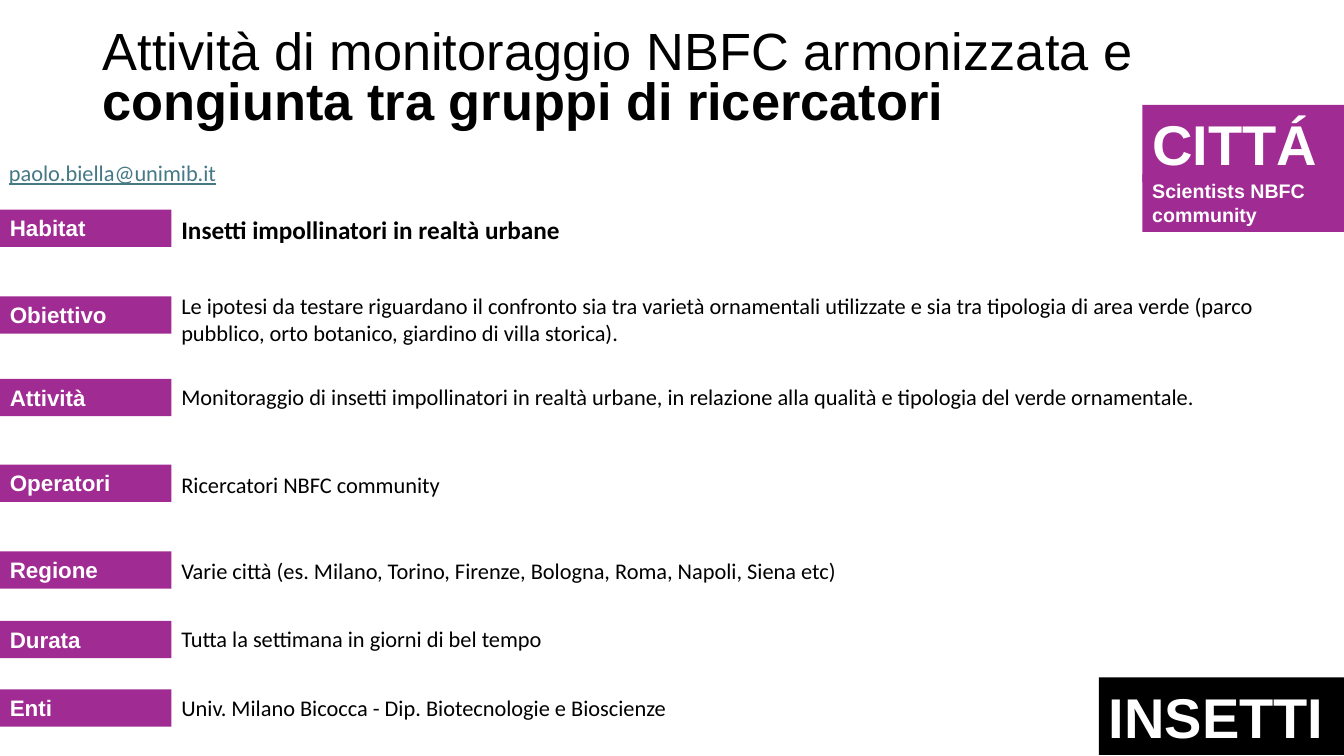
from pptx import Presentation
from pptx.dml.color import RGBColor
from pptx.enum.shapes import MSO_SHAPE as Shape
from pptx.enum.text import MSO_ANCHOR as Anchor, MSO_AUTO_SIZE as AutoSize, PP_ALIGN as Align
from pptx.util import Inches, Pt

PURPLE, BLACK, WHITE, LINK = "A02B93", "000000", "FFFFFF", "467886"
LABEL_WIDTH, LABEL_HEIGHT = 1.7, 0.37

# label, label top, text, text top, text width, text height, style
ROWS = [
    ("Habitat", 2.08, "Insetti impollinatori in realtà urbane",
     2.08, 11.13, 0.4, {"size": 18, "bold": True}),
    ("Obiettivo", 2.94, "Le ipotesi da testare riguardano il confronto sia tra varietà "
     "ornamentali utilizzate e sia tra tipologia di area verde (parco pubblico, "
     "orto botanico, giardino di villa storica).", 2.85, 11.13, 0.64, {}),
    ("Attività", 3.76, "Monitoraggio di insetti impollinatori in realtà urbane, in relazione "
     "alla qualità e tipologia del verde ornamentale.",
     3.73, 11.41, 0.7, {"align": Align.JUSTIFY, "spacing": 1.07}),
    ("Operatori", 4.61, "Ricercatori NBFC community",
     4.61, 10.62, 0.66, {"align": Align.JUSTIFY, "spacing": 1.07}),
    ("Regione", 5.47, "Varie città (es. Milano, Torino, Firenze, Bologna, Roma, Napoli, Siena etc)",
     5.48, 11.32, 0.37, {}),
    ("Durata", 6.16, "Tutta la settimana in giorni di bel tempo", 6.15, 11.41, 0.37, {}),
    ("Enti", 6.84, "Univ. Milano Bicocca - Dip. Biotecnologie e Bioscienze",
     6.84, 6.78, 0.37, {}),
]


def color(hex_text):
    return RGBColor.from_string(hex_text)


class ProjectSheet:
    heading_font = "Arial"
    body_font = "Calibri"

    def __init__(self, page):
        self.page = page

    def style_span(self, span, font, size, ink, bold=False, underline=False):
        span.font.name = font
        span.font.size = Pt(size)
        span.font.color.rgb = color(ink)
        span.font.bold = bold
        span.font.underline = underline

    def frame(self, shape, anchor=Anchor.TOP):
        """Apply the common wrapping, anchor and margins to a shape's text."""
        frame = shape.text_frame
        frame.auto_size = AutoSize.NONE
        frame.word_wrap = True
        frame.vertical_anchor = anchor
        frame.margin_left = frame.margin_right = Inches(0.1)
        frame.margin_top = frame.margin_bottom = Inches(0.05)
        return frame

    def title(self, left, top, width, height, parts):
        """Fill the title placeholder from (text, bold) parts."""
        title = self.page.shapes.title
        title.left, title.top = Inches(left), Inches(top)
        title.width, title.height = Inches(width), Inches(height)
        para = self.frame(title, Anchor.MIDDLE).paragraphs[0]
        para.alignment = Align.LEFT
        para.line_spacing = 0.8
        for text, bold in parts:
            span = para.add_run()
            span.text = text
            self.style_span(span, self.heading_font, 37.4, BLACK, bold)

    def text(self, left, top, width, height, text, size=16, ink=BLACK, bold=False,
             underline=False, align=Align.LEFT, spacing=1.0):
        box = self.page.shapes.add_textbox(
            Inches(left), Inches(top), Inches(width), Inches(height))
        para = self.frame(box).paragraphs[0]
        para.text = text
        para.alignment = align
        para.line_spacing = spacing
        self.style_span(para.runs[0], self.body_font, size, ink, bold, underline)

    def tag(self, left, top, width, height, text, size=16, fill=PURPLE):
        """Add a filled rectangle with bold white text."""
        tag = self.page.shapes.add_shape(
            Shape.RECTANGLE, Inches(left), Inches(top), Inches(width), Inches(height))
        tag.shadow.inherit = False
        tag.fill.solid()
        tag.fill.fore_color.rgb = color(fill)
        tag.line.fill.background()
        para = self.frame(tag).paragraphs[0]
        para.text = text
        para.alignment = Align.LEFT
        self.style_span(para.runs[0], self.heading_font, size, WHITE, bold=True)


def main():
    deck = Presentation()
    deck.slide_width, deck.slide_height = Inches(13.33), Inches(7.5)
    sheet = ProjectSheet(deck.slides.add_slide(deck.slide_layouts[5]))

    sheet.title(0.92, 0.07, 10.7, 1.45, [
        ("Attività di monitoraggio NBFC armonizzata e ", False),
        ("congiunta tra gruppi di ricercatori", True),
    ])
    sheet.text(-0.01, 1.51, 9.43, 0.39, "paolo.biella@unimib.it",
               ink=LINK, underline=True, spacing=1.07)

    for label, label_top, text, top, width, height, style in ROWS:
        sheet.tag(0, label_top, LABEL_WIDTH, LABEL_HEIGHT, label)
        sheet.text(LABEL_WIDTH, top, width, height, text, **style)

    sheet.tag(11.33, 1.04, 2, 0.77, "CITTÁ", size=40)
    sheet.tag(11.33, 1.73, 2, 0.57, "Scientists NBFC community", size=14)
    sheet.tag(10.9, 6.72, 2.43, 0.77, "INSETTI", size=40, fill=BLACK)

    deck.save("out.pptx")


if __name__ == "__main__":
    main()
